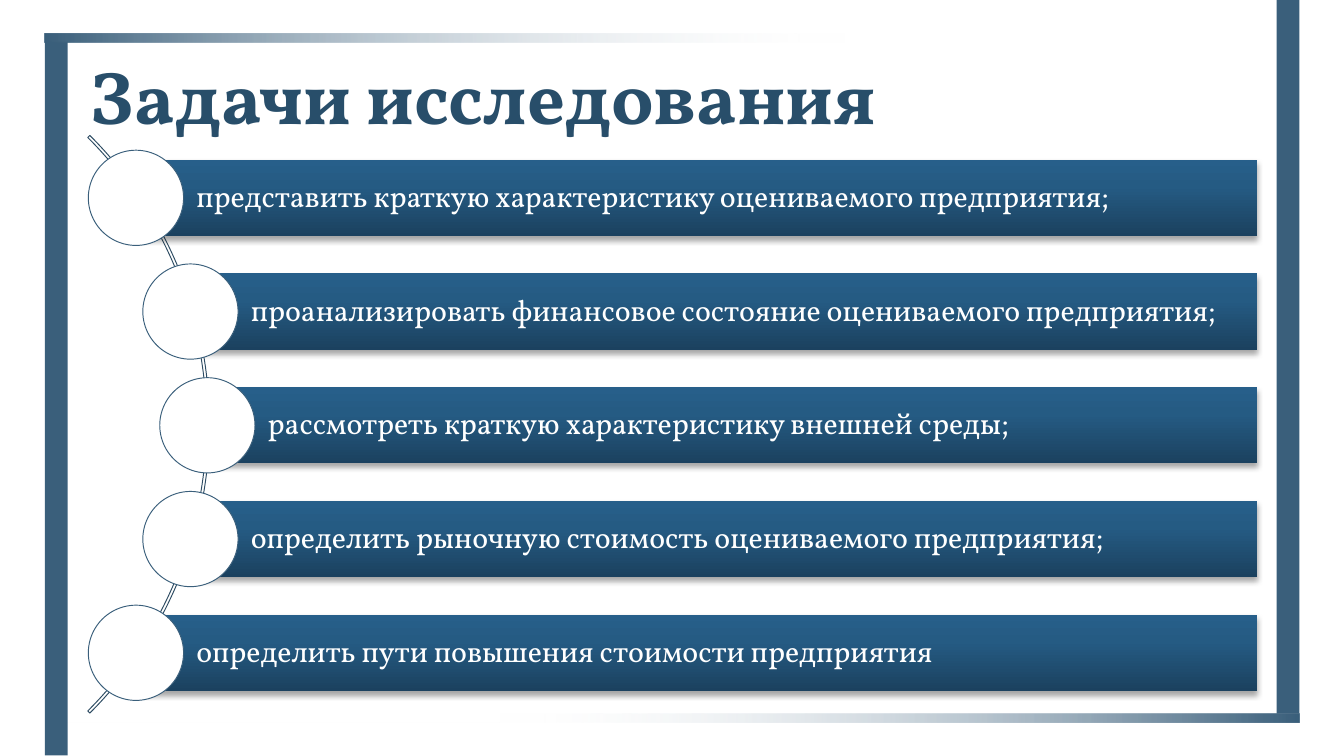
from dataclasses import dataclass
from typing import NamedTuple

from lxml import etree
from pptx import Presentation
from pptx import util as u
from pptx.dml.color import RGBColor
from pptx.enum import shapes, text
from pptx.oxml.ns import qn


class Stop(NamedTuple):
    """A gradient stop: position and opacity in percent."""
    position: int
    color: str
    opacity: int = 100


class Task(NamedTuple):
    """A research task and the horizontal centre of its circle in cm."""
    wording: str
    center: float


class Border(NamedTuple):
    """A piece of the slide frame in cm, plain or fading away."""
    left: float
    top: float
    width: float
    height: float
    fade_angle: int | None = None


@dataclass(frozen=True)
class Theme:
    """Colours, font and type sizes of the slide."""
    font: str = "Vollkorn"
    title_size: int = 40
    task_size: int = 16
    title: str = "284E6A"
    frame: str = "3A5F7B"
    arc: str = "2E4C63"
    light: str = "FFFFFF"
    shadow: str = "000000"
    bar: tuple = (Stop(0, "1B415F"), Stop(65, "255B83"), Stop(100, "275F8A"))
    fade: tuple = (Stop(0, "3A5F7B"), Stop(65, "FFFFFF", 0), Stop(100, "FFFFFF", 0))


THEME = Theme()
SHAPE = shapes.MSO_SHAPE
FIRST_BAR_TOP, BAR_PITCH, BAR_HEIGHT, BAR_RIGHT = 3.02, 2.15, 1.44, 23.76
CIRCLE = 1.8
BORDERS = [
    Border(24.13, 0, 0.43, 13.49),
    Border(0.85, 0.79, 0.43, 13.49),
    Border(1.27, 13.49, 23.29, 0.16, fade_angle=180),
    Border(0.85, 0.64, 23.29, 0.16, fade_angle=0),
]
TASKS = [
    Task("представить краткую характеристику оцениваемого предприятия;", 2.57),
    Task("проанализировать финансовое состояние оцениваемого предприятия;", 3.6),
    Task("рассмотреть краткую характеристику внешней среды;", 3.92),
    Task("определить рыночную стоимость оцениваемого предприятия;", 3.6),
    Task("определить пути повышения стоимости предприятия", 2.57),
]


def add_color(parent, color: str, opacity: int) -> None:
    """Append a colour with its opacity to an XML element."""
    node = etree.SubElement(parent, qn("a:srgbClr"), val=color)
    if opacity < 100:
        etree.SubElement(node, qn("a:alpha"), val=str(opacity * 1000))


def add_part(slide, kind, left: float, top: float, width: float, height: float,
             fill: str | None = None, line: str | None = None):
    """Draw a flat preset shape placed in cm."""
    part = slide.shapes.add_shape(kind, u.Cm(left), u.Cm(top), u.Cm(width), u.Cm(height))
    part.shadow.inherit = False
    if fill:
        part.fill.solid()
        part.fill.fore_color.rgb = RGBColor.from_string(fill)
    else:
        part.fill.background()
    if line:
        part.line.color.rgb = RGBColor.from_string(line)
        part.line.width = u.Pt(0.5)
    else:
        part.line.fill.background()
    return part


def set_gradient(part, stops: tuple, angle: int) -> None:
    """Fill a shape with a linear gradient, angle counted anticlockwise."""
    part.fill.gradient()
    part.fill.gradient_angle = angle
    stop_list = part.fill._xPr.find(qn("a:gradFill")).find(qn("a:gsLst"))
    for old_stop in list(stop_list):
        stop_list.remove(old_stop)
    for stop in stops:
        node = etree.SubElement(stop_list, qn("a:gs"), pos=str(stop.position * 1000))
        add_color(node, stop.color, stop.opacity)


def cast_shadow(part) -> None:
    """Give a shape a soft shadow straight below it."""
    effects = part._element.spPr.find(qn("a:effectLst"))
    shadow = etree.SubElement(effects, qn("a:outerShdw"), blurRad=str(u.Pt(3.1)),
                              dist=str(u.Pt(2)), dir="5400000", rotWithShape="0")
    add_color(shadow, THEME.shadow, 35)


def write(part, wording: str, *, size: int, color: str, bold: bool = False,
          anchor=text.MSO_ANCHOR.MIDDLE, spacing: float = 1.0,
          insets: tuple = (0.25, 0.13, 0.25, 0.13)) -> None:
    """Write one left-aligned paragraph, insets in cm from the left clockwise."""
    frame = part.text_frame
    frame.word_wrap = True
    frame.vertical_anchor = anchor
    (frame.margin_left, frame.margin_top,
     frame.margin_right, frame.margin_bottom) = map(u.Cm, insets)
    paragraph = frame.paragraphs[0]
    paragraph.alignment = text.PP_ALIGN.LEFT
    paragraph.line_spacing = spacing
    run = paragraph.add_run()
    run.text = wording
    run.font.name = THEME.font
    run.font.size = u.Pt(size)
    run.font.bold = bold
    run.font.color.rgb = RGBColor.from_string(color)


def draw_border(slide, border: Border) -> None:
    """Draw one piece of the frame."""
    part = add_part(slide, SHAPE.RECTANGLE, *border[:4], fill=THEME.frame)
    if border.fade_angle is not None:
        set_gradient(part, THEME.fade, border.fade_angle)


def draw_arc(slide) -> None:
    """Draw the thin arc that links the circles."""
    arc = add_part(slide, SHAPE.BLOCK_ARC, -11.48, 0.3, 15.44, 15.44, line=THEME.arc)
    for index, value in enumerate((189, 27, 0.0036)):
        arc.adjustments[index] = value


def draw_task(slide, task: Task, top: float) -> None:
    """Draw a task bar with its circle."""
    bar = add_part(slide, SHAPE.RECTANGLE, task.center, top,
                   BAR_RIGHT - task.center, BAR_HEIGHT)
    set_gradient(bar, THEME.bar, 90)
    cast_shadow(bar)
    write(bar, task.wording, size=THEME.task_size, color=THEME.light,
          spacing=0.9, insets=(1.14, 0.1, 0.1, 0.1))
    add_part(slide, SHAPE.OVAL, task.center - CIRCLE / 2,
             top + (BAR_HEIGHT - CIRCLE) / 2, CIRCLE, CIRCLE,
             fill=THEME.light, line=THEME.frame)


def main() -> None:
    """Build the slide of research tasks."""
    deck = Presentation()
    deck.slide_width, deck.slide_height = u.Cm(25.4), u.Cm(14.29)
    slide = deck.slides.add_slide(deck.slide_layouts[6])
    for border in BORDERS:
        draw_border(slide, border)
    title = slide.shapes.add_textbox(u.Cm(1.47), u.Cm(0.53), u.Cm(22.43), u.Cm(2.24))
    write(title, "Задачи исследования", size=THEME.title_size, color=THEME.title,
          bold=True, anchor=text.MSO_ANCHOR.BOTTOM)
    draw_arc(slide)
    for row, task in enumerate(TASKS):
        draw_task(slide, task, FIRST_BAR_TOP + row * BAR_PITCH)
    deck.save("out.pptx")


if __name__ == "__main__":
    main()
